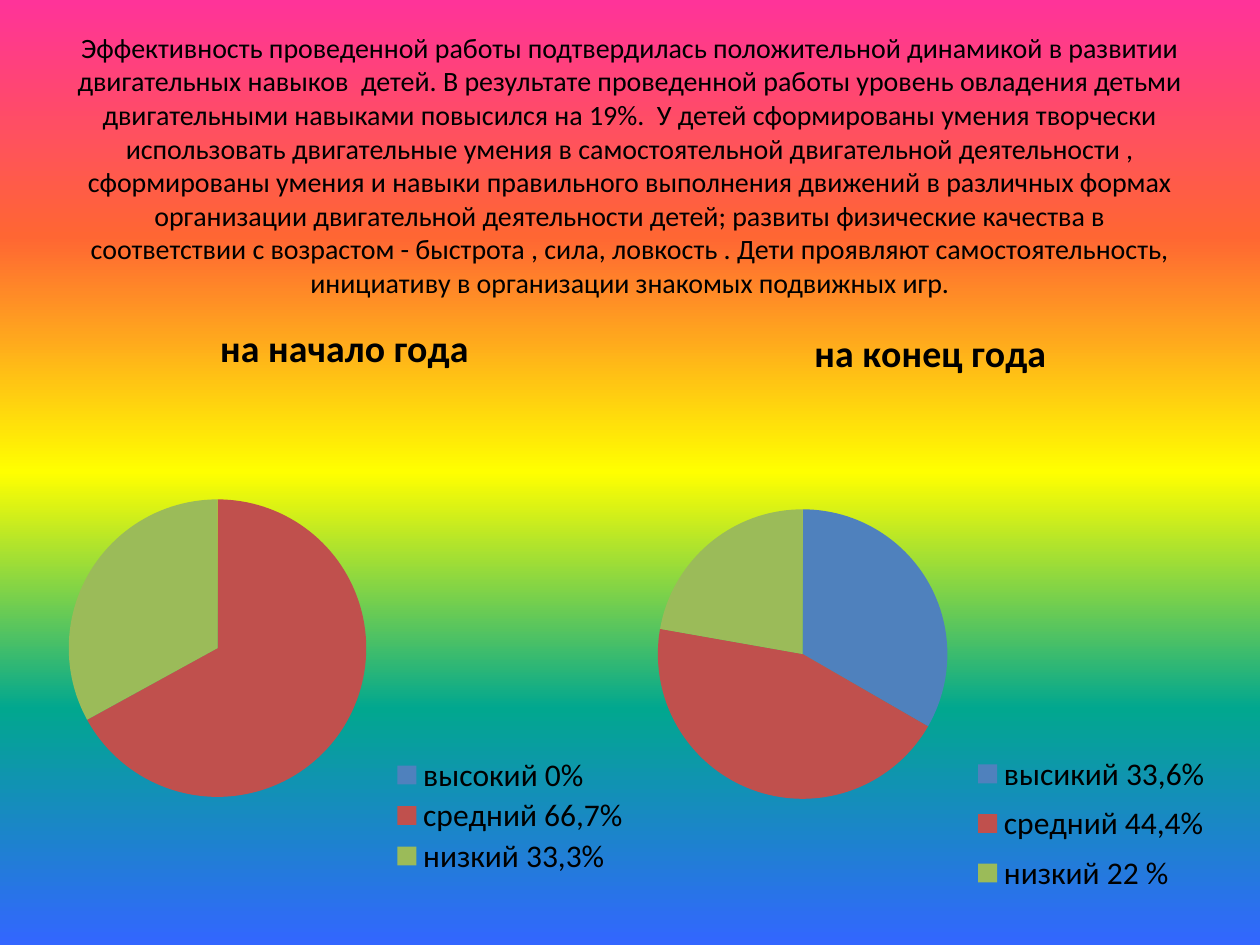
from pptx import Presentation
from pptx.chart.data import CategoryChartData as Data
from pptx.dml.color import RGBColor as RGB
from pptx.enum.chart import XL_CHART_TYPE as Kind, XL_LEGEND_POSITION as Side
from pptx.enum.text import MSO_ANCHOR as Anchor, PP_ALIGN as Align
from pptx.oxml import parse_xml
from pptx.oxml.ns import nsdecls, qn
from pptx.util import Inches, Pt

FONT = "Calibri"
BLACK = RGB(0, 0, 0)
SLICES = [RGB(0x4F, 0x81, 0xBD), RGB(0xC0, 0x50, 0x4D), RGB(0x9B, 0xBB, 0x59)]
RAINBOW = ["FF3399", "FF6633", "FFFF00", "01A78F", "3366FF"]

TITLE = (
    "Эффективность проведенной работы подтвердилась положительной динамикой "
    "в развитии двигательных навыков  детей. В результате проведенной работы "
    "уровень овладения детьми двигательными навыками повысился на 19%.  "
    "У детей сформированы умения творчески использовать двигательные умения "
    "в самостоятельной двигательной деятельности , сформированы умения и навыки "
    "правильного выполнения движений в различных формах организации двигательной "
    "деятельности детей; развиты физические качества в соответствии с возрастом - "
    "быстрота , сила, ловкость . Дети проявляют самостоятельность, инициативу "
    "в организации знакомых подвижных игр.\v"
)

# Plot and legend boxes are fractions of the chart: left, top, width, height
CHARTS = [
    dict(name="на начало года", box=(0.39, 2.34, 4.69, 4.92),
         cats=["высокий 0%", "средний 66,7%", "низкий 33,3%"], vals=[0, 67, 33],
         plot=(0.03, 0.33, 0.51, 0.48), legend=(0.58, 0.74, 0.4, 0.2)),
    dict(name="на конец года", box=(5.08, 2.38, 4.61, 4.89),
         cats=["высикий 33,6%", "средний 44,4%", "низкий 22 %"], vals=[33, 44, 22],
         plot=(0.03, 0.34, 0.5, 0.47), legend=(0.58, 0.72, 0.41, 0.26)),
]


def style(font, size, bold=False):
    font.name, font.size, font.bold = FONT, Pt(size), bold
    font.color.rgb = BLACK


def paint(slide):
    """Fill the background with the rainbow, top to bottom."""
    fill = slide.background.fill
    fill.gradient()
    fill.gradient_angle = 270
    stops = slide.element.find(".//" + qn("a:gsLst"))
    for stop in list(stops):
        stops.remove(stop)
    step = 100000 // (len(RAINBOW) - 1)
    for i, tint in enumerate(RAINBOW):
        stops.append(parse_xml(
            f'<a:gs {nsdecls("a")} pos="{i * step}"><a:srgbClr val="{tint}"/></a:gs>'))


def layout(box, inner=False):
    """Return a manual chart layout for a box given in fractions."""
    target = '<c:layoutTarget val="inner"/>' if inner else ""
    modes = "".join(f'<c:{k}Mode val="edge"/>' for k in "xy")
    sizes = "".join(f'<c:{k} val="{v}"/>' for k, v in zip("xywh", box))
    return parse_xml(f'<c:layout {nsdecls("c")}><c:manualLayout>{target}{modes}'
                     f'{sizes}</c:manualLayout></c:layout>')


def add_pie(slide, name, box, cats, vals, plot, legend):
    data = Data()
    data.categories = cats
    data.add_series(name, vals)
    chart = slide.shapes.add_chart(Kind.PIE, *map(Inches, box), data).chart
    style(chart.font, 18)

    chart.has_title = True
    head = chart.chart_title.text_frame
    head.text = name
    style(head.paragraphs[0].font, 21.6, True)

    pie = chart.plots[0]
    pie.vary_by_categories = True
    for i, tint in enumerate(SLICES):
        fill = pie.series[0].points[i].format.fill
        fill.solid()
        fill.fore_color.rgb = tint

    chart.has_legend = True
    chart.legend.position = Side.RIGHT
    chart.legend.include_in_layout = False
    style(chart.legend.font, 18)

    root = chart.element
    area = root.find(".//" + qn("c:plotArea"))
    key = root.find(".//" + qn("c:legend"))
    for part in (area, key):
        for old in part.findall(qn("c:layout")):
            part.remove(old)
    area.insert(0, layout(plot, inner=True))
    key.find(qn("c:legendPos")).addnext(layout(legend))


def main():
    deck = Presentation()
    deck.slide_width, deck.slide_height = Inches(10), Inches(7.5)
    slide = deck.slides.add_slide(deck.slide_layouts[5])
    paint(slide)

    title = slide.shapes.title
    title.left, title.top, title.width, title.height = map(Inches, (0.5, 0.3, 9, 2.28))
    frame = title.text_frame
    frame.text = TITLE
    frame.word_wrap = True
    frame.vertical_anchor = Anchor.MIDDLE
    para = frame.paragraphs[0]
    para.alignment = Align.CENTER
    style(para.font, 16)

    for chart in CHARTS:
        add_pie(slide, **chart)
    deck.save("out.pptx")


if __name__ == "__main__":
    main()
